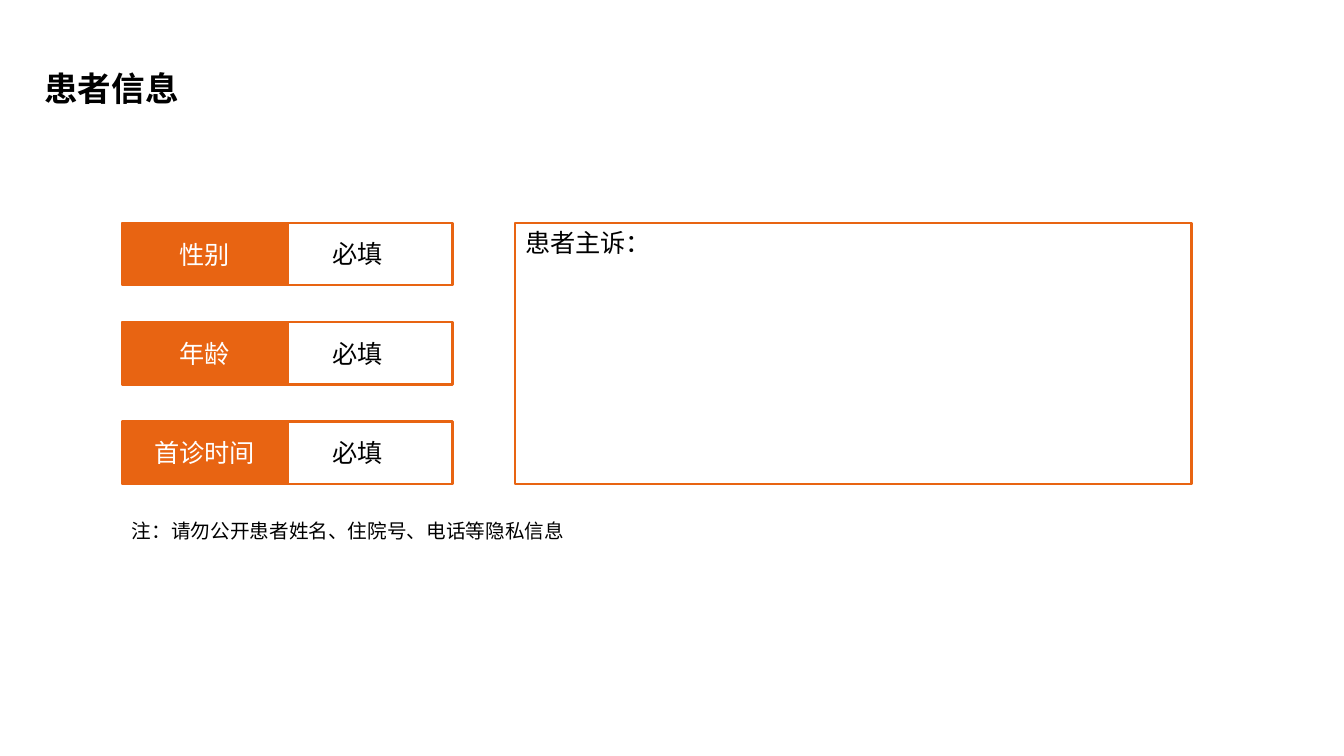
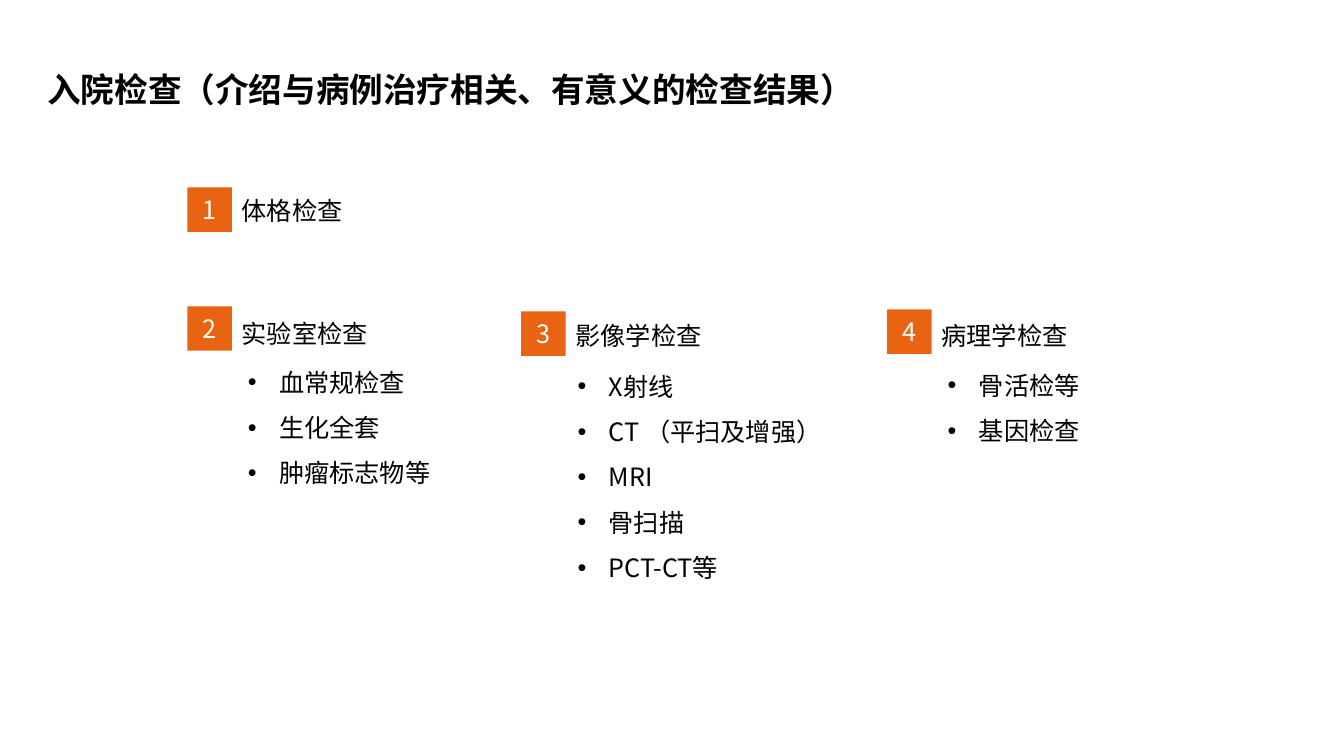
from dataclasses import dataclass

from lxml.etree import SubElement
from pptx import Presentation
from pptx.dml.color import RGBColor
from pptx.enum.shapes import MSO_SHAPE
from pptx.enum.text import MSO_ANCHOR, MSO_AUTO_SIZE, PP_ALIGN
from pptx.oxml.ns import qn
from pptx.util import Inches, Pt

# Content
PATIENT_TITLE = ("患者信息", (0.34, 0.62, 2.69, 0.5))
PATIENT_FIELDS = ["性别", "年龄", "首诊时间"]
REQUIRED = "必填"
COMPLAINT = "患者主诉："
PRIVACY_NOTE = "注：请勿公开患者姓名、住院号、电话等隐私信息"

EXAM_TITLE = ("入院检查（介绍与病例治疗相关、有意义的检查结果）", (0.37, 0.63, 8.43, 0.5))
# Each section: heading, badge corner, heading top, list corner, list width, items
EXAM_SECTIONS = [
    ("体格检查", (1.86, 1.86), 1.8, None, 0, []),
    ("实验室检查", (1.86, 3.04), 3.02, (2.36, 3.44), 3.84,
     ["血常规检查", "生化全套", "肿瘤标志物等"]),
    ("影像学检查", (5.17, 3.09), 3.04, (5.63, 3.48), 3.4,
     ["X射线", "CT （平扫及增强）", "MRI", "骨扫描", "PCT-CT等"]),
    ("病理学检查", (8.8, 3.07), 3.04, (9.3, 3.47), 3.84,
     ["骨活检等", "基因检查"]),
]


# Theme
@dataclass(frozen=True)
class Theme:
    font: str = "Noto Sans CJK SC"
    accent: RGBColor = RGBColor(0xE8, 0x64, 0x12)
    black: RGBColor = RGBColor(0, 0, 0)
    white: RGBColor = RGBColor(0xFF, 0xFF, 0xFF)
    title_size: int = 24
    body_size: int = 18
    note_size: int = 14
    outline: float = 1.75
    bullet_indent: float = 0.31


THEME = Theme()


# Helpers
def set_attributes(target, values):
    for name, value in values.items():
        setattr(target, name, value)


def add_bullet(paragraph):
    properties = paragraph._p.get_or_add_pPr()
    indent = Inches(THEME.bullet_indent)
    properties.set("marL", str(indent))
    properties.set("indent", str(-indent))
    SubElement(properties, qn("a:buFont"), typeface="Arial")
    SubElement(properties, qn("a:buChar"), char="•")


def write_text(frame, lines, size=THEME.body_size, color=THEME.black, bold=False,
               bullets=False, **paragraph_format):
    for index, line in enumerate(lines):
        paragraph = frame.add_paragraph() if index else frame.paragraphs[0]
        if bullets:
            add_bullet(paragraph)
        set_attributes(paragraph, paragraph_format)
        run = paragraph.add_run()
        run.text = line
        set_attributes(run.font, {"name": THEME.font, "size": Pt(size), "bold": bold})
        run.font.color.rgb = color
        # East Asian characters need their own typeface entry
        SubElement(run._r.get_or_add_rPr(), qn("a:ea"), typeface=THEME.font)


def add_text(slide, lines, box, wrap=True, **text_format):
    frame = slide.shapes.add_textbox(*map(Inches, box)).text_frame
    set_attributes(frame, {"word_wrap": wrap,
                           "auto_size": MSO_AUTO_SIZE.SHAPE_TO_FIT_TEXT})
    write_text(frame, lines, **text_format)


def add_box(slide, kind, box, filled=False, outlined=True):
    shape = slide.shapes.add_shape(kind, *map(Inches, box))
    shape.shadow.inherit = False
    if filled:
        shape.fill.solid()
        shape.fill.fore_color.rgb = THEME.accent
    else:
        shape.fill.background()
    if outlined:
        shape.line.color.rgb = THEME.accent
        shape.line.width = Pt(THEME.outline)
    else:
        shape.line.fill.background()
    return shape


def add_label_box(slide, kind, box, label, outlined=True):
    frame = add_box(slide, kind, box, filled=True, outlined=outlined).text_frame
    frame.vertical_anchor = MSO_ANCHOR.MIDDLE
    write_text(frame, [label], color=THEME.white, alignment=PP_ALIGN.CENTER)


def add_titled_slide(presentation, title):
    slide = presentation.slides.add_slide(presentation.slide_layouts[6])
    text, box = title
    add_text(slide, [text], box, size=THEME.title_size, bold=True)
    return slide


# Slides
def build_patient_slide(presentation):
    slide = add_titled_slide(presentation, PATIENT_TITLE)
    process = MSO_SHAPE.FLOWCHART_PROCESS
    left, top, width, height, pitch = 1.21, 2.21, 1.64, 0.62, 0.985

    # Field rows: label beside value
    for row, label in enumerate(PATIENT_FIELDS):
        row_top = top + row * pitch
        add_box(slide, process, (left + width, row_top, width, height))
        add_label_box(slide, process, (left, row_top, width, height), label)
        add_text(slide, [REQUIRED], (left + width + 0.35, row_top + 0.11, 0.7, 0.4),
                 wrap=False)

    # Complaint box spans all rows
    span = (len(PATIENT_FIELDS) - 1) * pitch + height
    frame = add_box(slide, process, (5.11, top, 6.71, span)).text_frame
    frame.vertical_anchor = MSO_ANCHOR.TOP
    write_text(frame, [COMPLAINT], alignment=PP_ALIGN.LEFT)
    add_text(slide, [PRIVACY_NOTE], (left, 5.1, 5.42, 0.34), size=THEME.note_size)


def build_exam_slide(presentation):
    slide = add_titled_slide(presentation, EXAM_TITLE)
    badge = 0.44
    for number, section in enumerate(EXAM_SECTIONS, 1):
        heading, (left, top), heading_top, list_corner, list_width, items = section
        add_label_box(slide, MSO_SHAPE.RECTANGLE, (left, top, badge, badge),
                      str(number), outlined=False)
        add_text(slide, [heading], (left + badge, heading_top, 4, 0.46),
                 line_spacing=1.3)
        if items:
            list_height = 0.05 + 0.455 * len(items)
            add_text(slide, items, (*list_corner, list_width, list_height),
                     bullets=True, line_spacing=1.5)


def main():
    presentation = Presentation()
    set_attributes(presentation, {"slide_width": Inches(13.33),
                                  "slide_height": Inches(7.5)})
    build_patient_slide(presentation)
    build_exam_slide(presentation)
    presentation.save("out.pptx")


if __name__ == "__main__":
    main()
